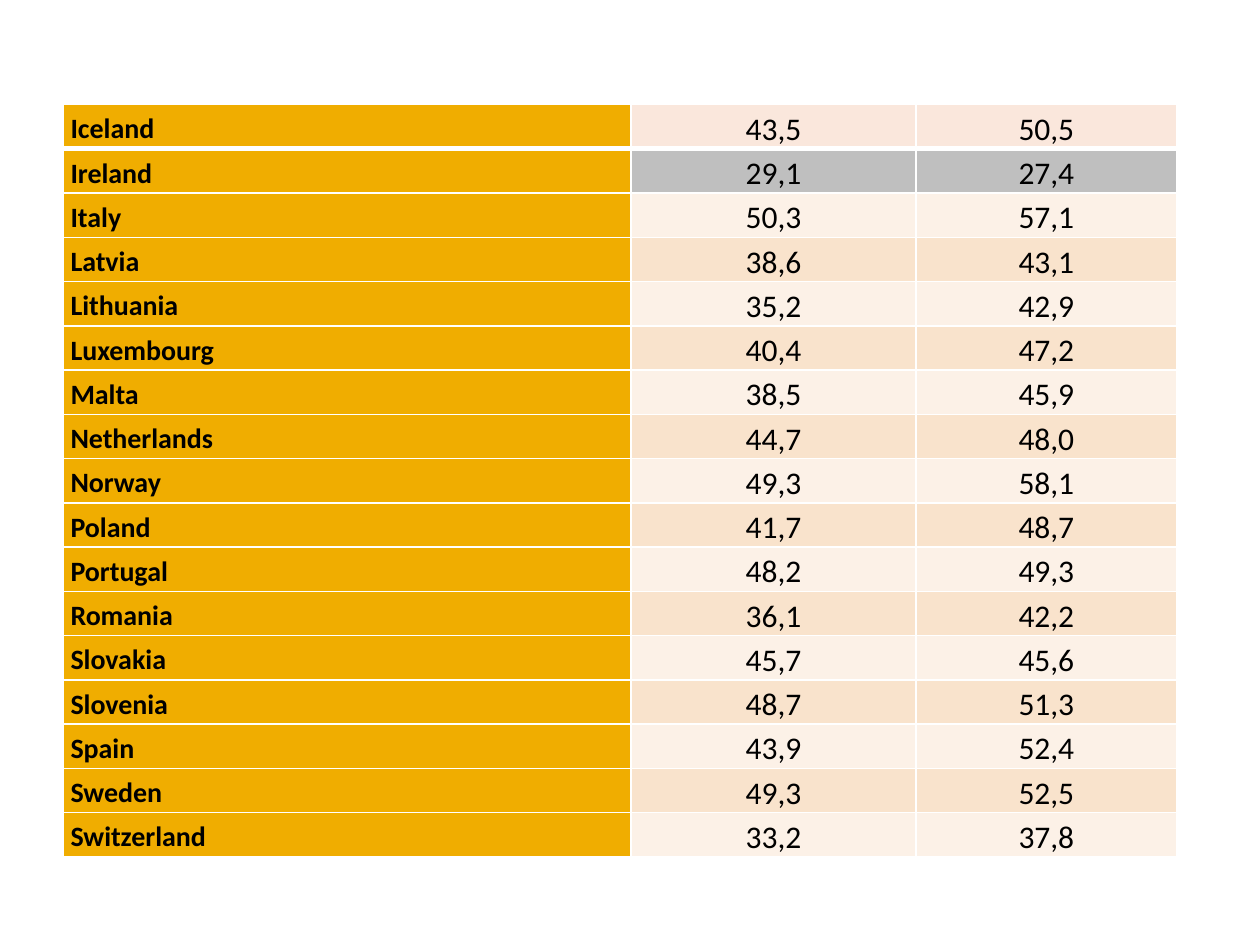
from dataclasses import dataclass

from lxml import etree
from pptx import Presentation
from pptx import util as u
from pptx.dml.color import RGBColor
from pptx.enum import text
from pptx.oxml import ns
from pptx.table import _Cell as Cell

HUES = {
    "name": "F0AD00",
    "top": "FAE7DC",
    "mark": "BFBFBF",
    "light": "FCF1E7",
    "dark": "F9E3CC",
    "line": "FFFFFF",
    "ink": "000000",
}
WIDTHS = (4.51, 2.26, 2.07)


@dataclass
class Nation:
    name: str
    first: str
    second: str


NATIONS = [
    Nation("Iceland", "43,5", "50,5"),
    Nation("Ireland", "29,1", "27,4"),
    Nation("Italy", "50,3", "57,1"),
    Nation("Latvia", "38,6", "43,1"),
    Nation("Lithuania", "35,2", "42,9"),
    Nation("Luxembourg", "40,4", "47,2"),
    Nation("Malta", "38,5", "45,9"),
    Nation("Netherlands", "44,7", "48,0"),
    Nation("Norway", "49,3", "58,1"),
    Nation("Poland", "41,7", "48,7"),
    Nation("Portugal", "48,2", "49,3"),
    Nation("Romania", "36,1", "42,2"),
    Nation("Slovakia", "45,7", "45,6"),
    Nation("Slovenia", "48,7", "51,3"),
    Nation("Spain", "43,9", "52,4"),
    Nation("Sweden", "49,3", "52,5"),
    Nation("Switzerland", "33,2", "37,8"),
]


def edge(cell: Cell, row: int) -> None:
    props = cell._tc.get_or_add_tcPr()
    thick = {(0, "B"), (1, "T")}
    for side in "LRTB":
        width = u.Pt(3 if (row, side) in thick else 1)
        line = etree.SubElement(props, ns.qn(f"a:ln{side}"), w=str(width))
        fill = etree.SubElement(line, ns.qn("a:solidFill"))
        etree.SubElement(fill, ns.qn("a:srgbClr"), val=HUES["line"])


def write(cell: Cell, words: str, hue: str, row: int, head: bool) -> None:
    edge(cell, row)
    cell.fill.solid()
    cell.fill.fore_color.rgb = RGBColor.from_string(HUES[hue])
    cell.margin_left = cell.margin_right = u.Inches(0.06)
    cell.margin_top = cell.margin_bottom = 0
    cell.vertical_anchor = text.MSO_ANCHOR.MIDDLE
    cell.text = words
    para = cell.text_frame.paragraphs[0]
    para.alignment = text.PP_ALIGN.LEFT if head else text.PP_ALIGN.CENTER
    para.line_spacing = 1.15
    para.font.name = "Calibri"
    para.font.size = u.Pt(16 if head else 18)
    para.font.bold = head
    para.font.color.rgb = RGBColor.from_string(HUES["ink"])


def shade(row: int) -> str:
    if row < 2:
        return ("top", "mark")[row]
    return ("light", "dark")[row % 2]


def main() -> None:
    deck = Presentation()
    deck.slide_width, deck.slide_height = u.Inches(10), u.Inches(7.5)
    slide = deck.slides.add_slide(deck.slide_layouts[6])
    table = slide.shapes.add_table(
        len(NATIONS), len(WIDTHS),
        u.Inches(0.5), u.Inches(0.83), u.Inches(8.83), u.Inches(5.87),
    ).table
    table.first_row = table.horz_banding = False
    for column, width in zip(table.columns, WIDTHS):
        column.width = u.Inches(width)
    for row, nation in enumerate(NATIONS):
        write(table.cell(row, 0), nation.name, "name", row, True)
        for col, value in enumerate((nation.first, nation.second), 1):
            write(table.cell(row, col), value, shade(row), row, False)
    deck.save("out.pptx")


if __name__ == "__main__":
    main()
